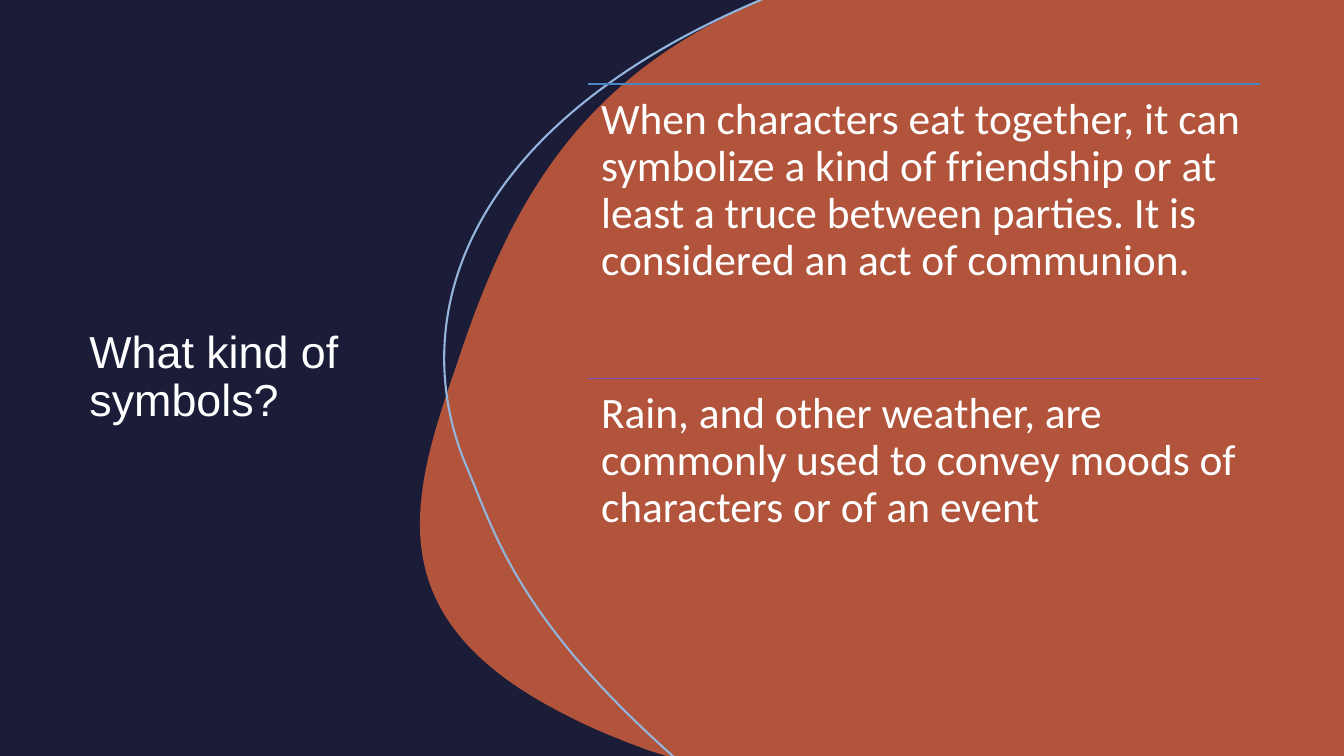
"""Build a slide about symbols: a title beside a curved panel with two ruled statements."""
from dataclasses import dataclass

import lxml.etree
import pptx
import pptx.dml.color
import pptx.enum.shapes
import pptx.enum.text
import pptx.oxml
import pptx.oxml.ns
import pptx.util
from pptx.util import Cm


@dataclass(frozen=True)
class Theme:
    """Colours, fonts and type sizes."""
    background: str = "1B1C38"
    panel: str = "B1543B"
    arc: str = "94B5DB"
    rules: tuple = ("4D84C3", "784DC3")
    text: str = "FFFFFF"
    title_font: str = "Arial"
    body_font: str = "Calibri"
    title_size: int = 32
    body_size: int = 31


THEME = Theme()
TITLE = "What kind of symbols?"
STATEMENTS = (
    "When characters eat together, it can symbolize a kind of friendship or at least "
    "a truce between parties. It is considered an act of communion.",
    "Rain, and other weather, are commonly used to convey moods of characters or of an event",
)
PANEL_CORNERS = [(19.2, 0), (33.87, 0), (33.87, 19.05), (16.79, 19.05), (16.38, 18.92)]
PANEL_CURVES = [
    [(15.62, 18.64), (14.91, 18.36), (14.25, 18.01)],
    [(9.42, 15.57), (10.36, 12.52), (11.51, 9.19)],
    [(12.75, 5.44), (14.4, 2.11), (18.92, 0.13)],
]
ARC_START = (19.41, -0.1)
ARC_CURVES = [
    [(11.46, 3.18), (10.24, 8.2), (11.76, 11.76)],
    [(12.45, 13.36), (12.98, 15.52), (16.99, 19.08)],
]
STATEMENT_LEFT, STATEMENT_TOP = 14.82, 2.12
STATEMENT_WIDTH, STATEMENT_HEIGHT = 16.93, 7.41


def color(value):
    """Return an RGB colour from its hex code."""
    return pptx.dml.color.RGBColor.from_string(value)


def trace_curves(start, curves, steps=40):
    """Return points along joined cubic curves, after the start point."""
    points = []
    for first, second, end in curves:
        for step in range(1, steps + 1):
            t = step / steps
            weights = ((1 - t) ** 3, 3 * t * (1 - t) ** 2, 3 * t ** 2 * (1 - t), t ** 3)
            corners = (start, first, second, end)
            points.append(tuple(
                sum(weight * corner[axis] for weight, corner in zip(weights, corners))
                for axis in (0, 1)))
        start = end
    return points


def add_segment(outline, tag, points, shape):
    """Append a drawing command with points relative to the shape."""
    segment = lxml.etree.SubElement(outline, pptx.oxml.ns.qn(tag))
    for x, y in points:
        point = lxml.etree.SubElement(segment, pptx.oxml.ns.qn("a:pt"))
        point.set("x", str(Cm(x) - shape.left))
        point.set("y", str(Cm(y) - shape.top))


def add_outline(slide, corners, curves, close):
    """Add an unshadowed freeform of straight corners followed by cubic curves."""
    traced = corners + trace_curves(corners[-1], curves)
    start, *others = [(Cm(x), Cm(y)) for x, y in traced]
    builder = slide.shapes.build_freeform(*start)
    builder.add_line_segments(others, close=close)
    shape = builder.convert_to_shape()
    shape.shadow.inherit = False
    outline = shape._element.xpath(".//a:path")[0]
    for segment in list(outline):
        outline.remove(segment)
    add_segment(outline, "a:moveTo", corners[:1], shape)
    for corner in corners[1:]:
        add_segment(outline, "a:lnTo", [corner], shape)
    for curve in curves:
        add_segment(outline, "a:cubicBezTo", curve, shape)
    if close:
        add_segment(outline, "a:close", [], shape)
    return shape


def add_panel(slide):
    """Add the filled panel with a curved left edge."""
    shape = add_outline(slide, PANEL_CORNERS, PANEL_CURVES, close=True)
    shape.fill.solid()
    shape.fill.fore_color.rgb = color(THEME.panel)
    shape.line.fill.background()


def add_arc(slide):
    """Add the thin open curve over the panel edge."""
    shape = add_outline(slide, [ARC_START], ARC_CURVES, close=False)
    shape.fill.background()
    shape.line.color.rgb = color(THEME.arc)
    shape.line.width = pptx.util.Pt(1.5)


def write_text(text_frame, text, font_name, size):
    """Write one left-aligned, wrapped paragraph."""
    text_frame.word_wrap = True
    text_frame.auto_size = pptx.enum.text.MSO_AUTO_SIZE.NONE
    text_frame.text = text
    paragraph = text_frame.paragraphs[0]
    paragraph.alignment = pptx.enum.text.PP_ALIGN.LEFT
    paragraph.line_spacing = 0.9
    paragraph.font.name = font_name
    paragraph.font.size = pptx.util.Pt(size)
    paragraph.font.color.rgb = color(THEME.text)


def set_title(slide):
    """Place and format the title placeholder."""
    title = slide.shapes.title
    title.left, title.top, title.width, title.height = Cm(2), Cm(6.35), Cm(8.47), Cm(6.35)
    title.text_frame.vertical_anchor = pptx.enum.text.MSO_ANCHOR.MIDDLE
    write_text(title.text_frame, TITLE, THEME.title_font, THEME.title_size)


def add_rule(slide, top, rule_color):
    """Add a thin horizontal rule above a statement."""
    rule = slide.shapes.add_connector(
        pptx.enum.shapes.MSO_CONNECTOR.STRAIGHT, Cm(STATEMENT_LEFT), Cm(top),
        Cm(STATEMENT_LEFT + STATEMENT_WIDTH), Cm(top))
    rule.line.color.rgb = color(rule_color)
    rule.line.width = pptx.util.Pt(1)
    properties = rule._element.spPr
    properties.append(pptx.oxml.parse_xml(
        f"<a:effectLst {pptx.oxml.ns.nsdecls('a')}/>"))


def add_statement(slide, top, text):
    """Add the text of a statement below its rule."""
    box = slide.shapes.add_textbox(
        Cm(STATEMENT_LEFT), Cm(top), Cm(STATEMENT_WIDTH), Cm(STATEMENT_HEIGHT))
    frame = box.text_frame
    frame.margin_left = frame.margin_right = Cm(0.33)
    frame.margin_top = frame.margin_bottom = Cm(0.33)
    write_text(frame, text, THEME.body_font, THEME.body_size)


def main():
    """Build and save the slide."""
    presentation = pptx.Presentation()
    presentation.slide_width, presentation.slide_height = Cm(33.87), Cm(19.05)
    slide = presentation.slides.add_slide(presentation.slide_layouts.get_by_name("Title Only"))
    slide.background.fill.solid()
    slide.background.fill.fore_color.rgb = color(THEME.background)
    set_title(slide)
    add_panel(slide)
    add_arc(slide)
    for index, (text, rule_color) in enumerate(zip(STATEMENTS, THEME.rules)):
        top = STATEMENT_TOP + index * STATEMENT_HEIGHT
        add_rule(slide, top, rule_color)
        add_statement(slide, top, text)
    presentation.save("out.pptx")


if __name__ == "__main__":
    main()
